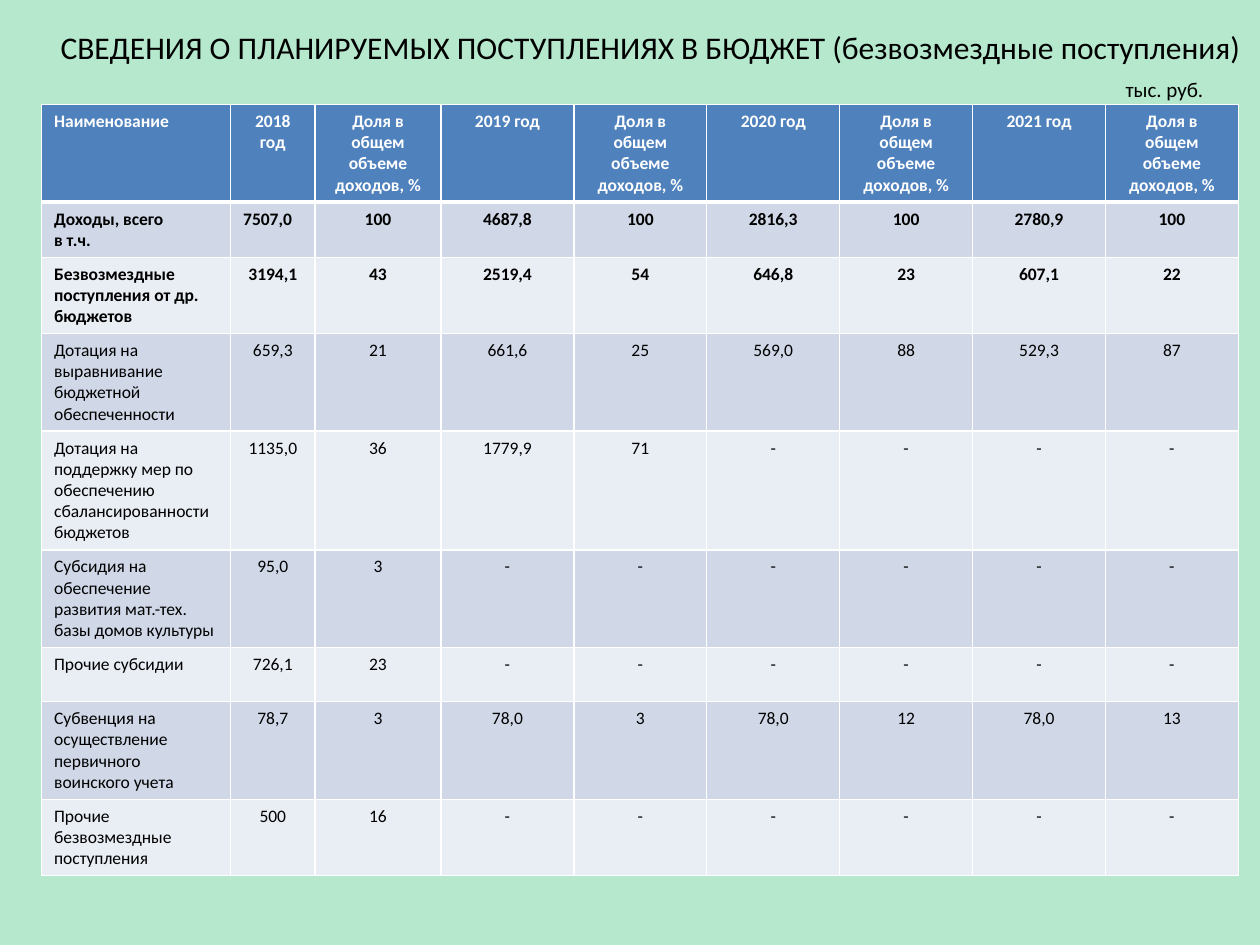
from lxml import etree
from pptx import Presentation, util as u
from pptx.dml.color import RGBColor
from pptx.enum import text
from pptx.oxml import ns

TITLE = "СВЕДЕНИЯ О ПЛАНИРУЕМЫХ ПОСТУПЛЕНИЯХ В БЮДЖЕТ (безвозмездные поступления)"
UNIT = "тыс. руб."
SHARE = "Доля в общем объеме доходов, %"
YEARS = ["2018 год", "2019 год", "2020 год", "2021 год"]
NONE = ["-"]
ROWS = [
    (4, ["Наименование"] + [part for year in YEARS for part in (year, SHARE)]),
    (2, ["Доходы, всего\nв т.ч.", "7507,0", "100", "4687,8", "100",
         "2816,3", "100", "2780,9", "100"]),
    (3, ["Безвозмездные поступления от др. бюджетов", "3194,1", "43",
         "2519,4", "54", "646,8", "23", "607,1", "22"]),
    (4, ["Дотация на выравнивание бюджетной обеспеченности", "659,3", "21",
         "661,6", "25", "569,0", "88", "529,3", "87"]),
    (5, ["Дотация на поддержку мер по обеспечению сбалансированности бюджетов",
         "1135,0", "36", "1779,9", "71"] + NONE * 4),
    (4, ["Субсидия на обеспечение развития мат.-тех. базы домов культуры",
         "95,0", "3"] + NONE * 6),
    (2, ["Прочие субсидии", "726,1", "23"] + NONE * 6),
    (4, ["Субвенция на осуществление первичного воинского учета", "78,7", "3",
         "78,0", "3", "78,0", "12", "78,0", "13"]),
    (3, ["Прочие безвозмездные поступления", "500", "16"] + NONE * 6),
]
THEME = {
    "font": "Calibri", "back": "B5E8CC", "ink": "000000", "white": "FFFFFF",
    "head": "4F81BD", "bands": ["E9EDF4", "D0D8E8"],
    "title": 18, "unit": 12, "cell": 10, "line": 1, "rule": 3,
}
WIDE, HIGH = 10, 7.5
LEFT, TOP, SPAN = 0.33, 0.83, 9.5
FIRST = [1.5, 0.67, 1]
LINE, PAD = 0.17, 0.09
ALIGN = text.PP_ALIGN


def style(frame, size, color, bold, align):
    for para in frame.paragraphs:
        para.alignment = align
        for run in para.runs:
            for key, value in {"name": THEME["font"], "size": u.Pt(size), "bold": bold}.items():
                setattr(run.font, key, value)
            run.font.color.rgb = RGBColor.from_string(color)


def place(shape, left, top, width, height):
    for key, value in zip(("left", "top", "width", "height"), (left, top, width, height)):
        setattr(shape, key, u.Inches(value))
    form = {"word_wrap": True, "auto_size": text.MSO_AUTO_SIZE.NONE,
            "vertical_anchor": text.MSO_ANCHOR.TOP}
    for key, value in form.items():
        setattr(shape.text_frame, key, value)


def edge(cell, row):
    props = cell._tc.get_or_add_tcPr()
    thick = {(0, "B"), (1, "T")}
    for side in "LRTB":
        size = THEME["rule" if (row, side) in thick else "line"]
        line = etree.SubElement(props, ns.qn("a:ln" + side), w=str(u.Pt(size)))
        fill = etree.SubElement(line, ns.qn("a:solidFill"))
        etree.SubElement(fill, ns.qn("a:srgbClr"), val=THEME["white"])


def grid(slide):
    count = len(ROWS[0][1])
    rest = count - len(FIRST)
    widths = FIRST + [(SPAN - sum(FIRST)) / rest] * rest
    highs = [PAD + LINE * lines for lines, _ in ROWS]
    table = slide.shapes.add_table(len(ROWS), count, u.Inches(LEFT), u.Inches(TOP),
                                   u.Inches(SPAN), u.Inches(sum(highs))).table
    for col, width in zip(table.columns, widths):
        col.width = u.Inches(width)
    for row, (_, items) in enumerate(ROWS):
        table.rows[row].height = u.Inches(highs[row])
        for col, item in enumerate(items):
            cell = table.cell(row, col)
            cell.text = item
            edge(cell, row)
            cell.fill.solid()
            back = THEME["bands"][row % 2] if row else THEME["head"]
            cell.fill.fore_color.rgb = RGBColor.from_string(back)
            left = col == 0 or (row, col) == (1, 1)
            style(cell.text_frame, THEME["cell"], THEME["ink" if row else "white"],
                  row < 3, ALIGN.LEFT if left else ALIGN.CENTER)


def main():
    deck = Presentation()
    deck.slide_width, deck.slide_height = u.Inches(WIDE), u.Inches(HIGH)
    slide = deck.slides.add_slide(deck.slide_layouts[5])
    slide.background.fill.solid()
    slide.background.fill.fore_color.rgb = RGBColor.from_string(THEME["back"])
    grid(slide)
    title = slide.shapes.title
    title.text = TITLE
    place(title, LEFT, 0.17, WIDE - LEFT, 0.4)
    style(title.text_frame, THEME["title"], THEME["ink"], False, ALIGN.CENTER)
    unit = slide.shapes.add_textbox(0, 0, 0, 0)
    unit.text_frame.text = UNIT
    place(unit, 8.65, 0.56, 1, 0.3)
    style(unit.text_frame, THEME["unit"], THEME["ink"], False, ALIGN.RIGHT)
    deck.save("out.pptx")


if __name__ == "__main__":
    main()
